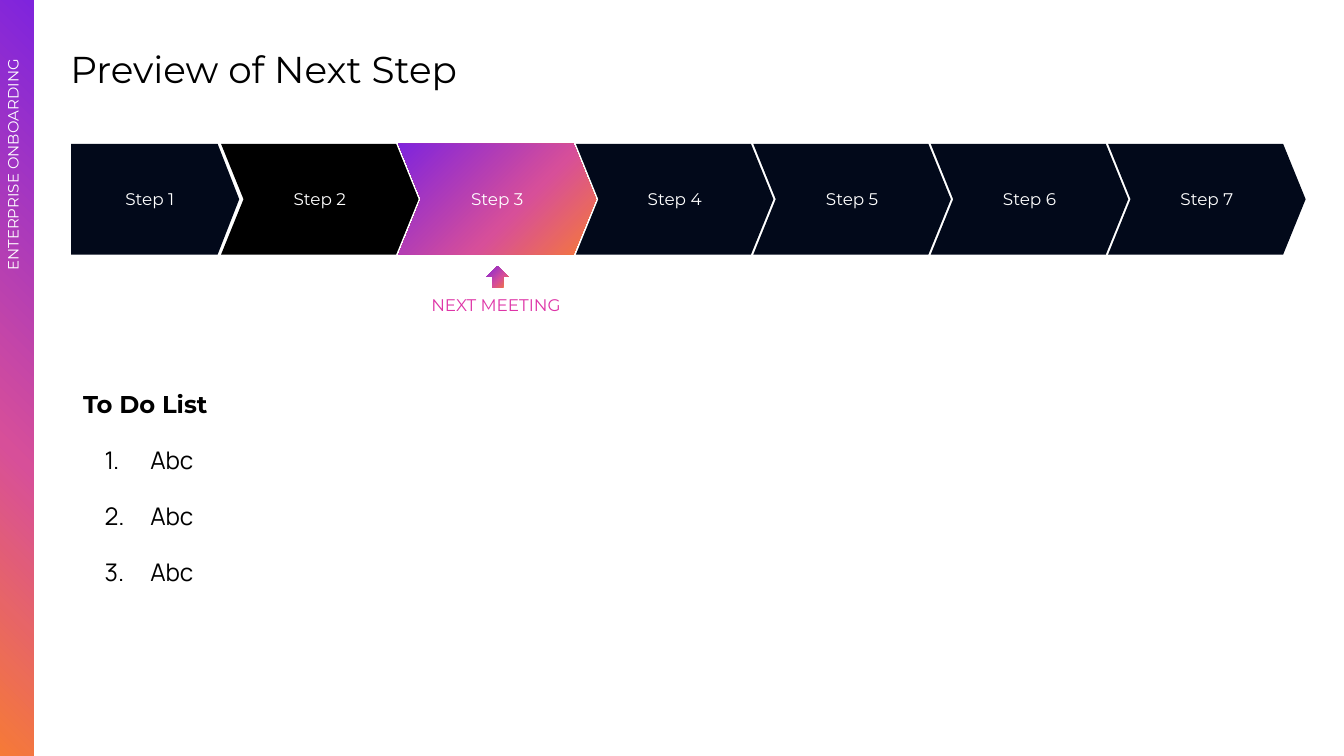
import copy

import pptx
import pptx.dml.color
import pptx.enum.shapes
import pptx.enum.text
import pptx.oxml.ns
import pptx.util
from lxml import etree

RGB = pptx.dml.color.RGBColor
SHAPE = pptx.enum.shapes.MSO_SHAPE
ALIGN = pptx.enum.text.PP_ALIGN
ANCHOR = pptx.enum.text.MSO_ANCHOR
qn = pptx.oxml.ns.qn

PX = 4572  # EMU per px, 200 px to the inch
BLACK = RGB(0x00, 0x00, 0x00)
WHITE = RGB(0xFF, 0xFF, 0xFF)
NAVY = RGB(0x02, 0x09, 0x1A)
PINK = RGB(0xDE, 0x34, 0xA7)
SUNSET = [(0, RGB(0xF6, 0x7A, 0x37)), (0.4, RGB(0xD7, 0x4F, 0x99)), (1, RGB(0x7F, 0x24, 0xDD))]


def px(*lengths):
    return [pptx.util.Emu(length * PX) for length in lengths]


def assign(target, values):
    for name, value in values.items():
        setattr(target, name, value)


class Painter:
    font = "Montserrat"
    inset = 20

    def __init__(self, page):
        self.page = page

    def paragraph(self, para, text, size, color, font=None, bold=False, **layout):
        assign(para, layout)
        span = para.add_run()
        span.text = text
        assign(span.font, {"name": font or self.font, "size": pptx.util.Pt(size), "bold": bold})
        span.font.color.rgb = color

    def frame(self, shape, **settings):
        sides = ("margin_left", "margin_top", "margin_right", "margin_bottom")
        frame = shape.text_frame
        assign(frame, {"word_wrap": True, **dict.fromkeys(sides, px(self.inset)[0]), **settings})
        return frame

    def text(self, box, text, size, color, rotation=0, **layout):
        shape = self.page.shapes.add_textbox(*px(*box))
        shape.rotation = rotation
        frame = self.frame(shape)
        self.paragraph(frame.paragraphs[0], text, size, color, **layout)
        return frame

    def numbered(self, frame, text, size, color, **layout):
        para = frame.add_paragraph()
        self.paragraph(para, text, size, color, **layout)
        props = para._p.get_or_add_pPr()
        indent, hanging = px(100, -68)
        props.set("marL", str(indent))
        props.set("indent", str(hanging))
        bullet_color = etree.SubElement(props, qn("a:buClr"))
        etree.SubElement(bullet_color, qn("a:srgbClr"), val=str(color))
        etree.SubElement(props, qn("a:buAutoNum"), type="arabicPeriod")

    def gradient(self, shape, angle):
        shape.fill.gradient()
        shape.fill.gradient_angle = angle
        stops = next(shape._element.iter(qn("a:gsLst")))
        stops.append(copy.deepcopy(stops[0]))
        for stop, (position, color) in zip(shape.fill.gradient_stops, SUNSET):
            stop.position = position
            stop.color.rgb = color

    def shape(self, kind, box, color=None, angle=135, adjust=None):
        """Draw a solid shape, or a gradient one when no color is given."""
        shape = self.page.shapes.add_shape(kind, *px(*box))
        shape.shadow.inherit = False
        shape.line.fill.background()
        if adjust is not None:
            shape.adjustments[0] = adjust
        if color is None:
            self.gradient(shape, angle)
        else:
            shape.fill.solid()
            shape.fill.fore_color.rgb = color
        return shape

    def step(self, label, kind, box, color, adjust):
        shape = self.shape(kind, box, color, adjust=adjust)
        frame = self.frame(shape, vertical_anchor=ANCHOR.MIDDLE)
        self.paragraph(frame.paragraphs[0], label, 9, WHITE, alignment=ALIGN.CENTER)


def main():
    deck = pptx.Presentation()
    deck.slide_width, deck.slide_height = px(2000, 1125)
    painter = Painter(deck.slides.add_slide(deck.slide_layouts[6]))

    # Title and side bar
    painter.text((85, 48, 1864, 112), "Preview of Next Step", 20, BLACK)
    painter.shape(SHAPE.RECTANGLE, (0, 0, 50, 1125), angle=45)
    painter.text((-452, 512, 956, 68), "ENTERPRISE ONBOARDING", 8, WHITE,
                 rotation=270, alignment=ALIGN.RIGHT)

    # Row of steps
    top, height, pitch = 214, 165, 264
    painter.step("Step 1", SHAPE.PENTAGON, (106, top, 250, height), NAVY, 0.195)
    for index, color in enumerate([BLACK, None, NAVY, NAVY, NAVY, NAVY]):
        box = (329 + index * pitch, top, 294, height)
        painter.step(f"Step {index + 2}", SHAPE.CHEVRON, box, color, 0.203)

    # Next meeting marker
    painter.text((591, 423, 294, 70), "NEXT MEETING", 9, PINK, alignment=ALIGN.CENTER)
    painter.shape(SHAPE.UP_ARROW, (724, 396, 33, 32))

    # To do list
    todo = painter.text((104, 553, 1818, 496), "To Do List", 13, BLACK, bold=True,
                        line_spacing=1.15)
    for item in ["Abc"] * 3:
        painter.numbered(todo, item, 13, BLACK, font="Manrope", line_spacing=1.15,
                         space_before=pptx.util.Pt(12))

    deck.save("out.pptx")


if __name__ == "__main__":
    main()
